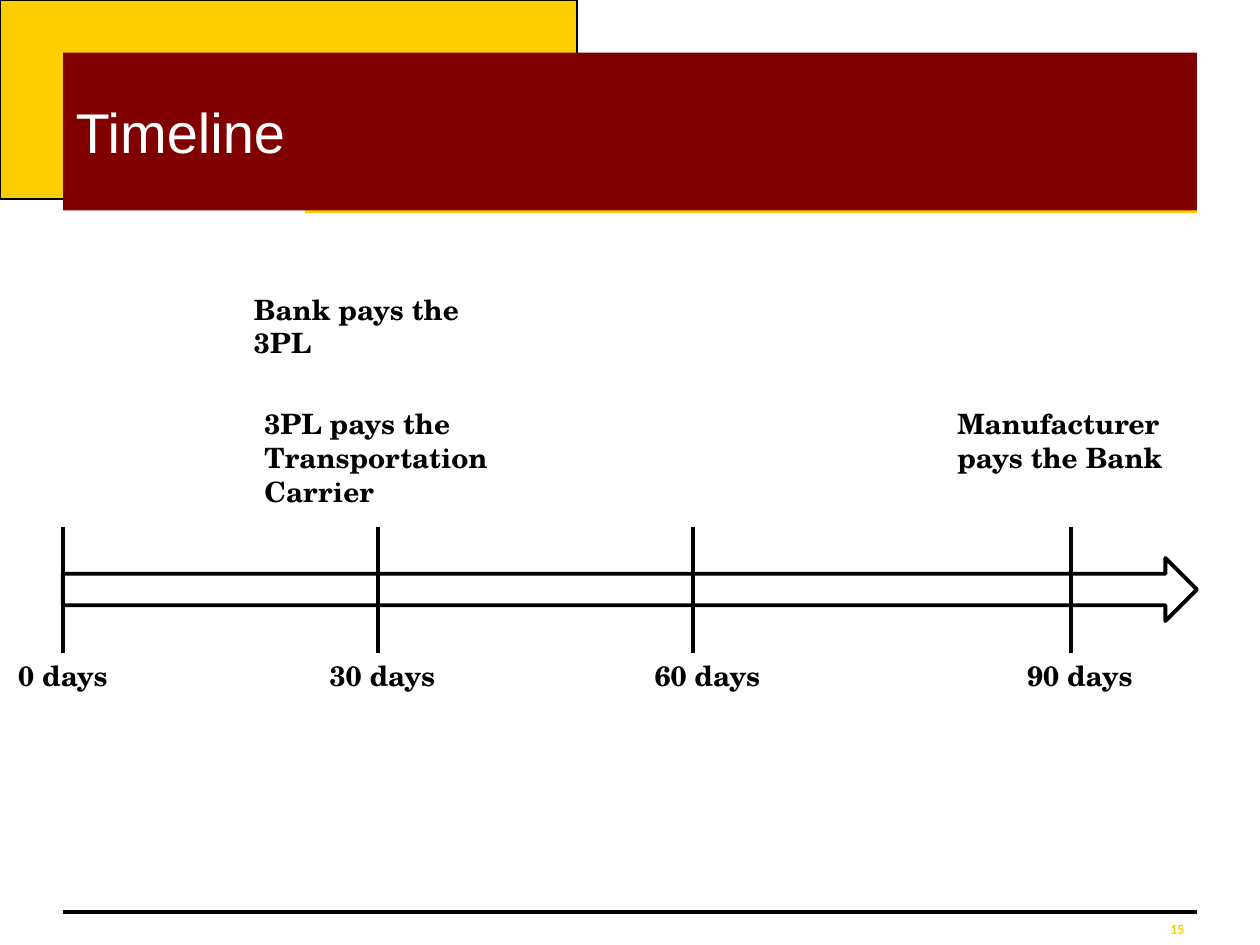
from lxml import etree
from pptx import Presentation
from pptx.dml.color import RGBColor
from pptx.enum.shapes import MSO_CONNECTOR as Connector, MSO_SHAPE as Shape
from pptx.enum.text import MSO_ANCHOR as Anchor, MSO_AUTO_SIZE as AutoSize, PP_ALIGN as Align
from pptx.oxml.ns import qn
from pptx.util import Cm, Pt

BLACK, WHITE, GOLD, MAROON = "000000", "FFFFFF", "FFCC00", "800000"


def write(shape, text, size=16, font="TeX Gyre Schola", color=BLACK, bold=True,
          align=Align.LEFT, anchor=Anchor.TOP, fit=AutoSize.SHAPE_TO_FIT_TEXT):
    frame = shape.text_frame
    frame.word_wrap = True
    frame.auto_size = fit
    frame.vertical_anchor = anchor
    frame.text = text
    paragraph = frame.paragraphs[0]
    paragraph.alignment = align
    paragraph.font.size = Pt(size)
    paragraph.font.name = font
    paragraph.font.bold = bold
    paragraph.font.color.rgb = RGBColor.from_string(color)


def add_line(x1, y1, x2, y2, color=BLACK, width=2.25):
    line = slide.shapes.add_connector(Connector.STRAIGHT, Cm(x1), Cm(y1), Cm(x2), Cm(y2))
    line.line.color.rgb = RGBColor.from_string(color)
    line.line.width = Pt(width)
    etree.SubElement(line.element.spPr, qn("a:effectLst"))


presentation = Presentation()
presentation.slide_width, presentation.slide_height = Cm(25.4), Cm(19.05)
slide = presentation.slides.add_slide(presentation.slide_layouts[5])

left, right = 1.27, 24.13
add_line(left, 18.39, right, 18.39)

blocks = [
    (Shape.RECTANGLE, 0, 0, 11.64, 4.01, GOLD, 1),
    (Shape.RIGHT_ARROW, left, 11.25, right - left, 1.27, WHITE, 2.25),
]
for kind, x, y, width, height, fill, line_width in blocks:
    shape = slide.shapes.add_shape(kind, Cm(x), Cm(y), Cm(width), Cm(height))
    shape.shadow.inherit = False
    shape.fill.solid()
    shape.fill.fore_color.rgb = RGBColor.from_string(fill)
    shape.line.color.rgb = RGBColor.from_string(BLACK)
    shape.line.width = Pt(line_width)

add_line(6.15, 4.24, right, 4.24, color=GOLD, width=3)

title = slide.shapes.title
title.left, title.top, title.width, title.height = Cm(left), Cm(1.06), Cm(right - left), Cm(3.18)
title.fill.solid()
title.fill.fore_color.rgb = RGBColor.from_string(MAROON)
write(title, "Timeline", size=32, font="Arial", color=WHITE, bold=False,
      anchor=Anchor.MIDDLE, fit=AutoSize.NONE)
slide.shapes.element.append(title.element)

milestones = [("0 days", 1.27, 2.54), ("30 days", 7.62, 2.72),
              ("60 days", 13.97, 3.12), ("90 days", 21.59, 2.9)]
for label, x, width in milestones:
    add_line(x, 10.62, x, 13.16)
    box = slide.shapes.add_textbox(Cm(x - 1.27), Cm(13.16), Cm(width), Cm(1.02))
    write(box, label, align=Align.CENTER)

events = [("3PL pays the Transportation Carrier", 5.08, 8.08, 2.57),
          ("Manufacturer pays the Bank", 19.05, 8.08, 1.8),
          ("Bank pays the 3PL", 4.87, 5.77, 1.8)]
for event, x, y, height in events:
    box = slide.shapes.add_textbox(Cm(x), Cm(y), Cm(5.08), Cm(height))
    write(box, event)

page_number = slide.shapes.add_textbox(Cm(left), Cm(18.44), Cm(right - left), Cm(0.58))
write(page_number, "15", size=8, font="Calibri", color=GOLD, align=Align.RIGHT)

presentation.save("out.pptx")
